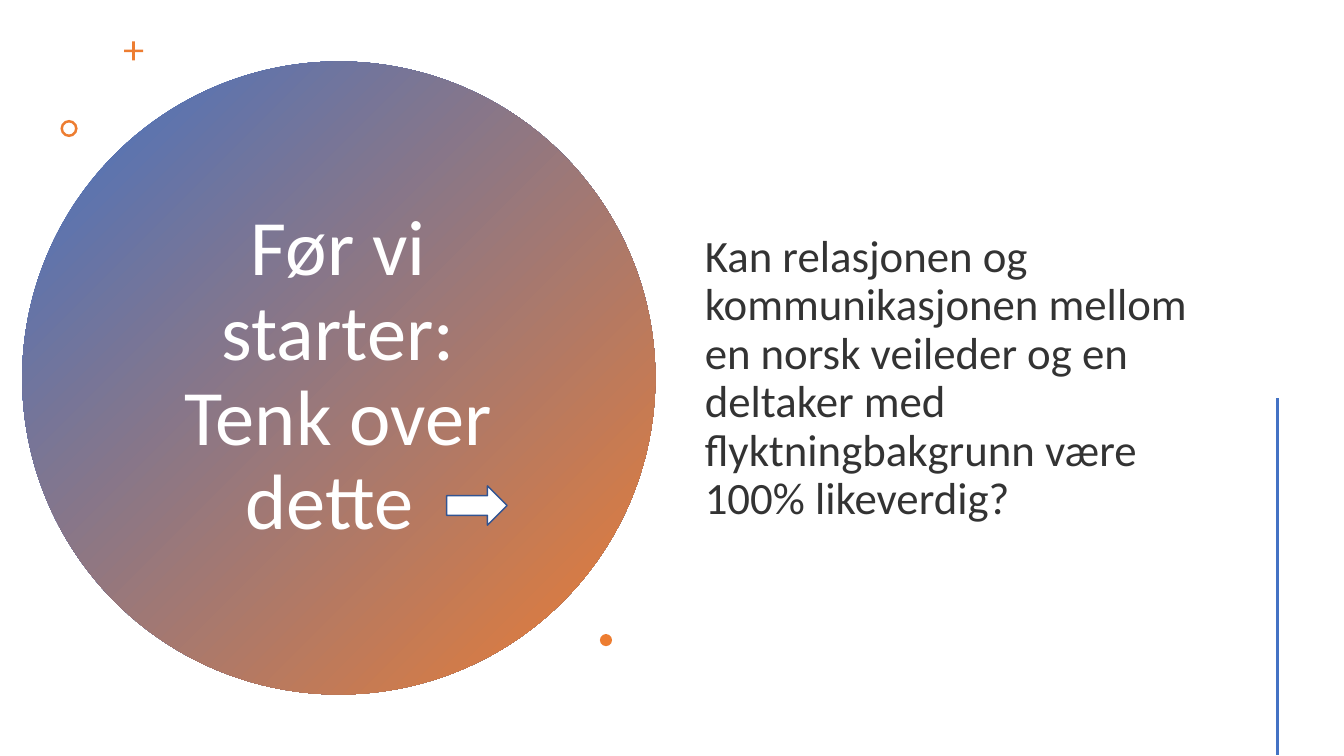
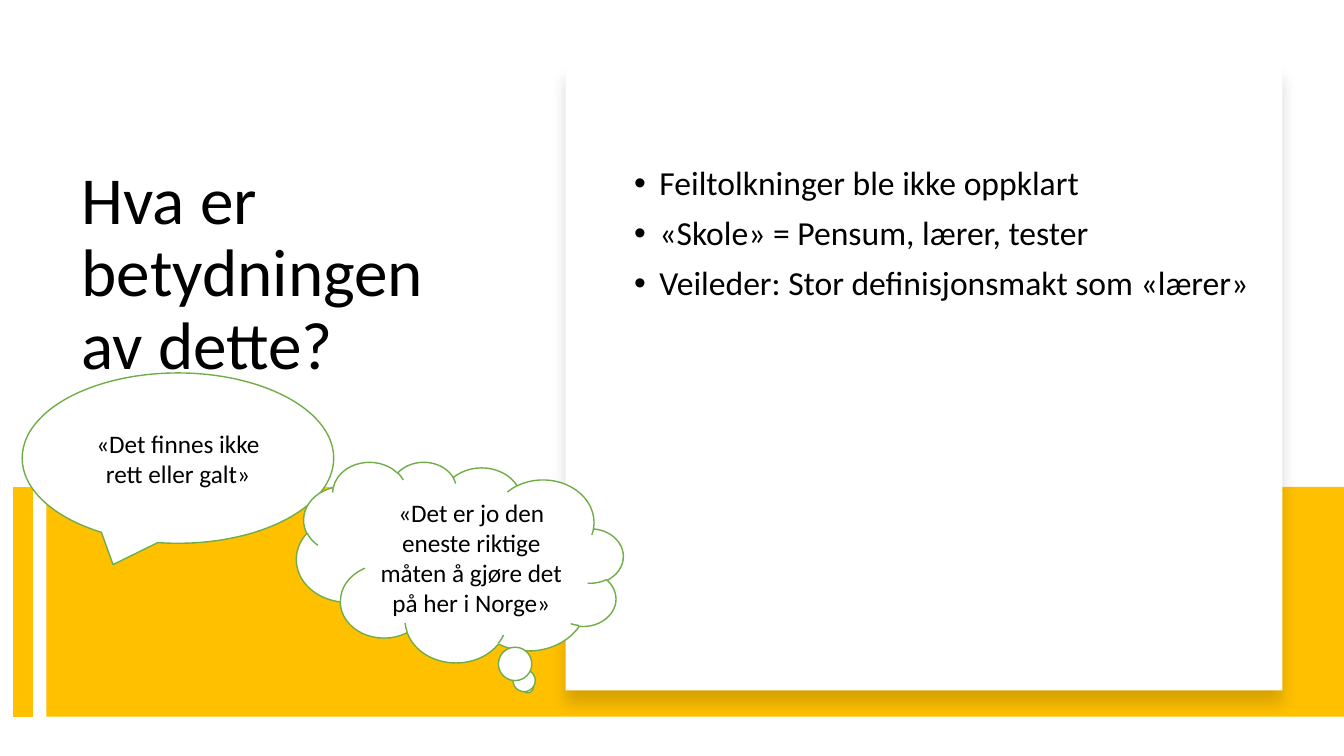
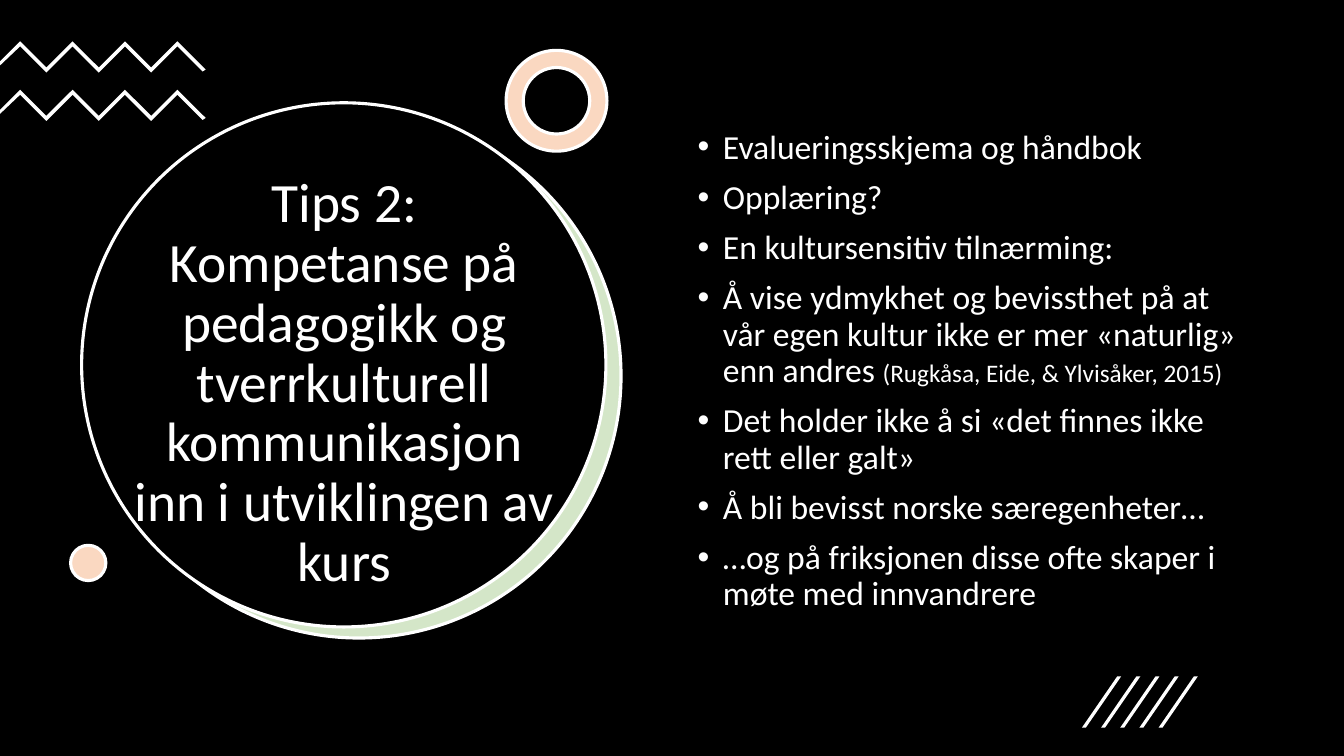
from lxml import etree
from pptx import Presentation
from pptx.dml.color import RGBColor
from pptx.enum.dml import MSO_FILL
from pptx.enum.shapes import MSO_CONNECTOR, MSO_SHAPE
from pptx.enum.text import MSO_ANCHOR, MSO_AUTO_SIZE, PP_ALIGN
from pptx.oxml.ns import qn
from pptx.util import Inches, Pt

RECT, OVAL, DONUT = MSO_SHAPE.RECTANGLE, MSO_SHAPE.OVAL, MSO_SHAPE.DONUT
CROSS, ARROW = MSO_SHAPE.CROSS, MSO_SHAPE.RIGHT_ARROW
SLASH = MSO_SHAPE.PARALLELOGRAM
SPEECH, CLOUD = MSO_SHAPE.OVAL_CALLOUT, MSO_SHAPE.CLOUD_CALLOUT
STRAIGHT = MSO_CONNECTOR.STRAIGHT
LEFT, CENTER = PP_ALIGN.LEFT, PP_ALIGN.CENTER
TOP, MIDDLE = MSO_ANCHOR.TOP, MSO_ANCHOR.MIDDLE
NO_FIT = MSO_AUTO_SIZE.NONE

FONT = "Calibri"
BLACK, WHITE, INK = "000000", "FFFFFF", "333333"
BLUE, NAVY, ORANGE = "4472C4", "325491", "ED7D31"
GOLD, GREEN = "FFC000", "70AD47"
PEACH, MINT = "FAD8C1", "D4E6C8"


def rgb(code):
    """Turn a hex string into a colour."""
    return RGBColor.from_string(code)


class Deck:
    """Hold the shared style and the current slide."""

    def __init__(self):
        """Start a wide presentation."""
        self.file = Presentation()
        self.file.slide_width, self.file.slide_height = Inches(13.33), Inches(7.5)

    def page(self, back=WHITE):
        """Add a slide with a title and a body."""
        self.slide = self.file.slides.add_slide(self.file.slide_layouts[1])
        self.slide.background.fill.solid()
        self.slide.background.fill.fore_color.rgb = rgb(back)

    def paint(self, shape, fill, line=None, width=1):
        """Set fill and line, without a shadow."""
        shape.shadow.inherit = False
        shape.fill.solid()
        shape.fill.fore_color.rgb = rgb(fill)
        if line:
            shape.line.color.rgb = rgb(line)
            shape.line.width = Pt(width)
        else:
            shape.line.fill.background()
        return shape

    def shape(self, kind, box, fill, line=None, width=1, adjust=None):
        """Add a preset shape."""
        item = self.slide.shapes.add_shape(kind, *map(Inches, box))
        if adjust is not None:
            item.adjustments[0] = adjust
        return self.paint(item, fill, line, width)

    def blend(self, shape, first, last):
        """Fill a shape with a gradient from top left to bottom right."""
        shape.fill.gradient()
        shape.fill.gradient_angle = 315
        for stop, code in zip(shape.fill.gradient_stops, (first, last)):
            stop.color.rgb = rgb(code)

    def shade(self, shape):
        """Give a shape a soft shadow below."""
        effects = shape.element.spPr.find(qn("a:effectLst"))
        outer = etree.SubElement(effects, qn("a:outerShdw"), blurRad=str(Pt(11)),
                                 dist=str(Pt(10)), dir="5400000")
        color = etree.SubElement(outer, qn("a:srgbClr"), val=BLACK)
        etree.SubElement(color, qn("a:alpha"), val="15000")

    def line(self, start, end, color, width):
        """Add a straight line."""
        item = self.slide.shapes.add_connector(STRAIGHT, *map(Inches, start + end))
        item.line.color.rgb = rgb(color)
        item.line.width = Pt(width)
        etree.SubElement(item.element.spPr, qn("a:effectLst"))

    def outline(self, points, fill):
        """Add a closed polygon."""
        spots = [(Inches(x), Inches(y)) for x, y in points]
        maker = self.slide.shapes.build_freeform(*spots[0])
        maker.add_line_segments(spots[1:])
        self.paint(maker.convert_to_shape(), fill)

    def style(self, part, size, color):
        """Format the runs of a paragraph."""
        for run in part.runs:
            run.font.name = FONT
            run.font.size = Pt(size)
            run.font.color.rgb = rgb(color)

    def place(self, holder, box, anchor):
        """Move a placeholder and bring it to the front."""
        holder.left, holder.top, holder.width, holder.height = map(Inches, box)
        holder.element.getparent().append(holder.element)
        frame = holder.text_frame
        frame.auto_size = NO_FIT
        frame.word_wrap = True
        frame.vertical_anchor = anchor
        return frame

    def title(self, text, box, size, color, align=CENTER, anchor=MIDDLE):
        """Fill the title placeholder."""
        frame = self.place(self.slide.shapes.title, box, anchor)
        frame.text = text
        part = frame.paragraphs[0]
        part.alignment = align
        part.line_spacing = 0.9
        self.style(part, size, color)

    def body(self, items, box, size, color, anchor=TOP, bullet=True):
        """Fill the body placeholder and return its paragraphs."""
        frame = self.place(self.slide.placeholders[1], box, anchor)
        frame.text = "\n".join(items)
        indent = Inches(0.25) if bullet else 0
        for part in frame.paragraphs:
            part.line_spacing = 0.9
            part.space_before = Pt(10)
            props = part._p.get_or_add_pPr()
            props.set("marL", str(indent))
            props.set("indent", str(-indent))
            if bullet:
                etree.SubElement(props, qn("a:buChar"), char="•")
            else:
                etree.SubElement(props, qn("a:buNone"))
            self.style(part, size, color)
        return frame.paragraphs

    def quote(self, kind, text, box, flip=False):
        """Add a callout with a quotation."""
        item = self.shape(kind, box, WHITE, GREEN)
        if flip:
            item.element.spPr.xfrm.set("flipH", "1")
        frame = item.text_frame
        frame.text = text
        frame.word_wrap = True
        frame.vertical_anchor = MIDDLE
        frame.paragraphs[0].alignment = CENTER
        self.style(frame.paragraphs[0], 18, BLACK)

    def zigzag(self, top):
        """Add a white zigzag band from the left edge."""
        peaks = [(0.2 + 0.26 * i, top + 0.26 * (i % 2)) for i in range(7)]
        under = [(x, y + 0.05) for x, y in reversed(peaks)]
        tip = [(2.04, top + 0.28), (2.01, top + 0.3)]
        edge = [(0, top + 0.24), (0, top + 0.2)]
        self.outline(peaks + tip + under + edge, WHITE)


def opening(deck):
    """Build the question slide."""
    deck.page()
    disc = deck.shape(OVAL, (0.22, 0.61, 6.28, 6.28), BLUE)
    deck.blend(disc, BLUE, ORANGE)
    deck.title("Før vi starter: Tenk over dette ", (1.36, 1.41, 3.99, 4.67), 56, WHITE)
    deck.shape(CROSS, (1.23, 0.41, 0.19, 0.19), ORANGE, adjust=0.43)
    deck.shape(DONUT, (0.6, 1.19, 0.17, 0.17), ORANGE, adjust=0.15)
    deck.body(["Kan relasjonen og kommunikasjonen mellom en norsk veileder og en "
               "deltaker med flyktningbakgrunn være 100% likeverdig?"],
              (6.89, 0.57, 5.22, 6.38), 32, INK, MIDDLE, bullet=False)
    deck.shape(OVAL, (5.95, 6.29, 0.12, 0.12), ORANGE)
    deck.line((12.67, 3.95), (12.67, 7.49), BLUE, 2)
    deck.shape(ARROW, (4.43, 4.82, 0.6, 0.39), WHITE, NAVY)


def meaning(deck):
    """Build the slide with the two quotations."""
    deck.page()
    deck.title("Hva er betydningen av dette?", (0.71, 1.6, 4.15, 2.94), 48, BLACK,
               LEFT, TOP)
    deck.shape(RECT, (0.46, 4.83, 12.87, 2.28), GOLD)
    deck.line((0.23, 4.83), (0.23, 7.11), GOLD, 14)
    deck.shade(deck.shape(RECT, (5.61, 0.64, 7.11, 6.21), WHITE))
    deck.body(["Feiltolkninger ble ikke oppklart",
               "«Skole» = Pensum, lærer, tester",
               "Veileder: Stor definisjonsmakt som «lærer»"],
              (6.19, 1.6, 6.78, 4.7), 24, BLACK)
    deck.quote(SPEECH, "«Det finnes ikke rett eller galt»", (0.22, 3.7, 3.09, 1.69))
    deck.quote(CLOUD, "«Det er jo den eneste riktige måten å gjøre det på her i Norge»",
               (2.94, 4.58, 3.24, 1.99), flip=True)


def advice(deck):
    """Build the dark slide with the second tip."""
    deck.page(BLACK)
    for left, top, fill in ((0.96, 1.13, MINT), (0.81, 1.02, BLACK)):
        deck.shape(OVAL, (left, top, 5.2, 5.2), fill, WHITE, 2.25)
    deck.title("Tips 2: Kompetanse på pedagogikk og tverrkulturell kommunikasjon "
               "inn i utviklingen av kurs", (1.21, 2.05, 4.41, 3.52), 39.6, WHITE)
    for top in (0.41, 0.89):
        deck.zigzag(top)
    deck.shape(DONUT, (5.02, 0.5, 1, 1), PEACH, WHITE, 2.25, adjust=0.17)
    deck.shape(OVAL, (0.7, 5.41, 0.35, 0.35), PEACH, WHITE, 2.25)
    parts = deck.body(["Evalueringsskjema og håndbok",
                       "Opplæring?",
                       "En kultursensitiv tilnærming:",
                       "Å vise ydmykhet og bevissthet på at vår egen kultur ikke er "
                       "mer «naturlig» enn andres ",
                       "Det holder ikke å si «det finnes ikke rett eller galt»",
                       "Å bli bevisst norske særegenheter…",
                       "…og på friksjonen disse ofte skaper i møte med innvandrere"],
                      (6.82, 1.24, 5.71, 4.76), 24, WHITE)
    cite = parts[3].add_run()
    cite.text = "(Rugkåsa, Eide, & Ylvisåker, 2015)"
    deck.style(parts[3], 24, WHITE)
    cite.font.size = Pt(18)
    for i in range(5):
        deck.shape(SLASH, (10.73 + 0.19 * i, 6.71, 0.39, 0.51), WHITE, adjust=0.9)


def main():
    """Build and save the slides."""
    deck = Deck()
    for build in (opening, meaning, advice):
        build(deck)
    deck.file.save("out.pptx")


if __name__ == "__main__":
    main()
